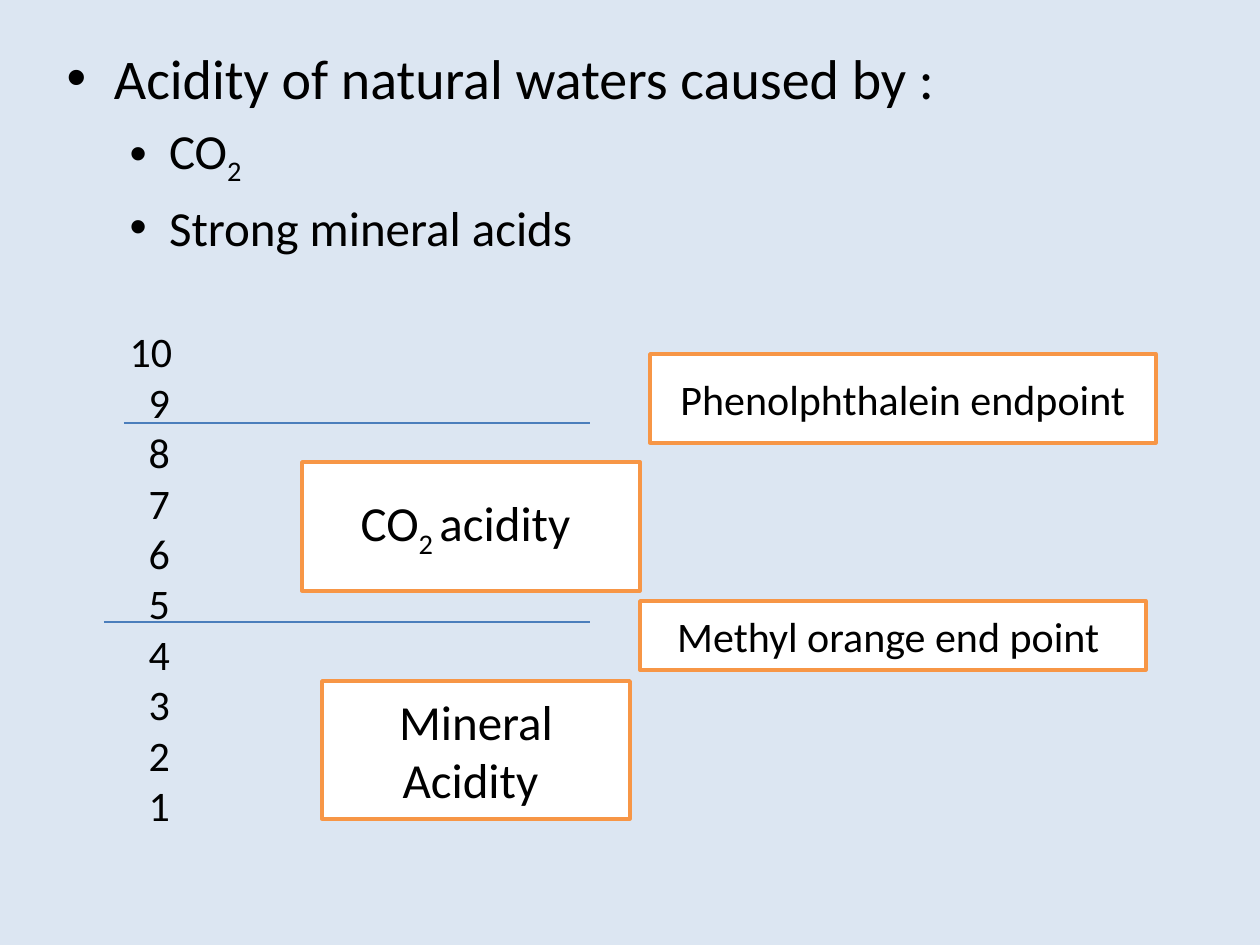
import pptx
import pptx.dml.color
import pptx.enum.shapes
import pptx.enum.text
import pptx.oxml.ns
import pptx.util
from lxml import etree

EMU_PER_PX = 914400 / 126
FONT = "Calibri"
BLACK, WHITE = "000000", "FFFFFF"
BACKGROUND, ORANGE, BLUE = "DCE6F2", "F79646", "4B7EBC"
CO2 = [("CO", False), ("2", True)]


def px(length):
    return pptx.util.Emu(round(length * EMU_PER_PX))


def color(value):
    return pptx.dml.color.RGBColor.from_string(value)


def add_xml(parent, tag, **attributes):
    return etree.SubElement(parent, pptx.oxml.ns.qn(tag), **attributes)


def write(paragraph, parts, size):
    """Fill a paragraph with (text, is_subscript) parts."""
    for text, is_subscript in parts:
        run = paragraph.add_run()
        run.text = text
        run.font.name = FONT
        run.font.size = pptx.util.Pt(size)
        run.font.color.rgb = color(BLACK)
        if is_subscript:
            run._r.get_or_add_rPr().set("baseline", "-25000")


def next_paragraph(text_frame):
    first = text_frame.paragraphs[0]
    return text_frame.add_paragraph() if first.runs else first


def add_bullet(text_frame, parts, size, level=0):
    paragraph = next_paragraph(text_frame)
    paragraph.level = level
    write(paragraph, parts, size)
    properties = paragraph._p.get_or_add_pPr()
    add_xml(properties, "a:buFont", typeface="Arial")
    add_xml(properties, "a:buChar", char="•")


def add_scale_value(text_frame, value, space_before):
    """Add an unbulleted pH value, indented so that the units digits line up."""
    paragraph = next_paragraph(text_frame)
    paragraph.level = 1
    write(paragraph, [(str(value), False)], 24)
    properties = paragraph._p.get_or_add_pPr()
    properties.set("marL", str(px(63 if value >= 10 else 82)))
    properties.set("indent", "0")
    add_xml(properties, "a:buNone")
    paragraph.space_before = pptx.util.Pt(space_before)


def add_line(slide, left, right, y):
    line = slide.shapes.add_connector(
        pptx.enum.shapes.MSO_CONNECTOR.STRAIGHT, px(left), px(y), px(right), px(y))
    line.line.color.rgb = color(BLUE)
    line.line.width = pptx.util.Pt(0.75)
    add_xml(line._element.spPr, "a:effectLst")


def add_label(slide, bounds, parts, size):
    label = slide.shapes.add_shape(
        pptx.enum.shapes.MSO_SHAPE.RECTANGLE, *map(px, bounds))
    label.shadow.inherit = False
    label.fill.solid()
    label.fill.fore_color.rgb = color(WHITE)
    label.line.color.rgb = color(ORANGE)
    label.line.width = pptx.util.Pt(2)
    text_frame = label.text_frame
    text_frame.word_wrap = True
    text_frame.vertical_anchor = pptx.enum.text.MSO_ANCHOR.MIDDLE
    paragraph = text_frame.paragraphs[0]
    paragraph.alignment = pptx.enum.text.PP_ALIGN.CENTER
    write(paragraph, parts, size)


def main():
    presentation = pptx.Presentation()
    presentation.slide_width, presentation.slide_height = px(1260), px(945)
    slide = presentation.slides.add_slide(presentation.slide_layouts[1])
    slide.background.fill.solid()
    slide.background.fill.fore_color.rgb = color(BACKGROUND)
    title = slide.shapes.title._element
    title.getparent().remove(title)

    body = slide.placeholders[1]
    body.left, body.top, body.width, body.height = map(px, (54, 37, 1160, 863))
    text_frame = body.text_frame
    add_bullet(text_frame, [("Acidity of natural waters caused by :", False)], 32)
    add_bullet(text_frame, CO2, 28, level=1)
    add_bullet(text_frame, [("Strong mineral acids", False)], 28, level=1)
    for value in range(10, 0, -1):
        add_scale_value(text_frame, value, space_before=40 if value == 10 else 0)

    add_line(slide, 124, 590, 423)
    add_line(slide, 104, 590, 622)

    add_label(slide, (302, 462, 338, 129),
              [("CO", False), ("2 ", True), ("acidity ", False)], 28)
    add_label(slide, (650, 354, 506, 89), [("Phenolphthalein endpoint", False)], 24)
    add_label(slide, (640, 601, 506, 69), [("Methyl orange end point ", False)], 24)
    add_label(slide, (322, 681, 308, 138), [("Mineral Acidity ", False)], 28)

    presentation.save("out.pptx")


if __name__ == "__main__":
    main()
